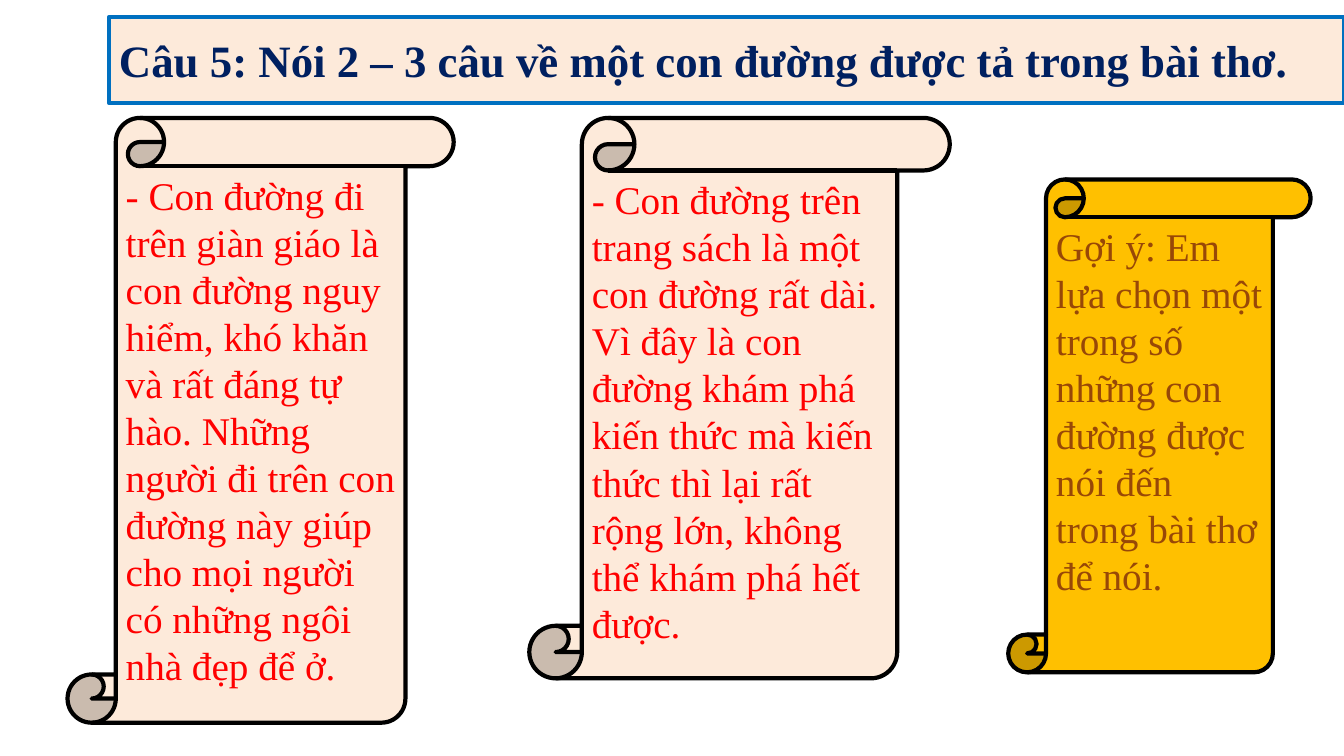
from dataclasses import dataclass

from lxml.etree import SubElement
from pptx import Presentation
from pptx.dml.color import RGBColor
from pptx.enum.shapes import MSO_SHAPE as Shape
from pptx.enum.text import MSO_ANCHOR as Anchor, MSO_AUTO_SIZE as AutoSize, PP_ALIGN as Align
from pptx.oxml.ns import qn
from pptx.shapes.autoshape import Shape as Box
from pptx.slide import Slide
from pptx.util import Inches, Pt

COLOURS = {
    "cream": "FDEADA", "gold": "FFC000", "black": "000000", "blue": "0070C0",
    "navy": "002060", "red": "FF0000", "brown": "984807",
}
FONT = "Times New Roman"


@dataclass
class Scroll:
    left: float
    top: float
    width: float
    height: float
    text: str
    fill: str = "cream"
    line: str = "black"
    ink: str = "red"
    size: int = 28
    bold: bool = False
    anchor: Anchor = Anchor.TOP


TITLE = Scroll(1.08, 0.17, 12.25, 0.85,
               "Câu 5: Nói 2 – 3 câu về một con đường được tả trong bài thơ.",
               line="blue", ink="navy", size=32, bold=True, anchor=Anchor.MIDDLE)

SCROLLS = [
    Scroll(10, 1.78, 3, 4.89,
           "Gợi ý: Em lựa chọn một trong số những con đường được nói đến trong bài thơ để nói.",
           fill="gold", ink="brown"),
    Scroll(0.67, 1.17, 3.83, 6,
           "- Con đường đi trên giàn giáo là con đường nguy hiểm, khó khăn và rất đáng tự hào. "
           "Những người đi trên con đường này giúp cho mọi người có những ngôi nhà đẹp để ở."),
    Scroll(5.25, 1.17, 4.17, 5.56,
           "- Con đường trên trang sách là một con đường rất dài. Vì đây là con đường khám phá "
           "kiến thức mà kiến thức thì lại rất rộng lớn, không thể khám phá hết được."),
]


def colour(name: str) -> RGBColor:
    return RGBColor.from_string(COLOURS[name])


def style_scroll(box: Box, scroll: Scroll) -> None:
    """Place, colour and fill one scroll with its text."""
    box.left, box.top = Inches(scroll.left), Inches(scroll.top)
    box.width, box.height = Inches(scroll.width), Inches(scroll.height)
    box.fill.solid()
    box.fill.fore_color.rgb = colour(scroll.fill)
    box.line.color.rgb = colour(scroll.line)
    box.line.width = Pt(3)
    box.shadow.inherit = False

    frame = box.text_frame
    frame.word_wrap = True
    frame.auto_size = AutoSize.NONE
    frame.vertical_anchor = scroll.anchor
    para = frame.paragraphs[0]
    para.alignment = Align.LEFT
    para.line_spacing = 1.0
    span = para.add_run()
    span.text = scroll.text
    span.font.name = FONT
    span.font.size = Pt(scroll.size)
    span.font.bold = scroll.bold
    span.font.color.rgb = colour(scroll.ink)


def add_title(page: Slide, scroll: Scroll) -> None:
    """Give the title placeholder a horizontal scroll outline."""
    box = page.shapes.title
    box.left = Inches(scroll.left)
    outline = SubElement(box.element.spPr, qn("a:prstGeom"), prst="horizontalScroll")
    SubElement(outline, qn("a:avLst"))
    style_scroll(box, scroll)


def add_scroll(page: Slide, scroll: Scroll) -> None:
    box = page.shapes.add_shape(Shape.VERTICAL_SCROLL, 0, 0, Inches(1), Inches(1))
    style_scroll(box, scroll)


def main() -> None:
    deck = Presentation()
    deck.slide_width, deck.slide_height = Inches(13.33), Inches(7.5)
    page = deck.slides.add_slide(deck.slide_layouts[5])

    # Question across the top
    add_title(page, TITLE)

    # Hint and the two sample answers
    for scroll in SCROLLS:
        add_scroll(page, scroll)

    deck.save("out.pptx")


if __name__ == "__main__":
    main()
